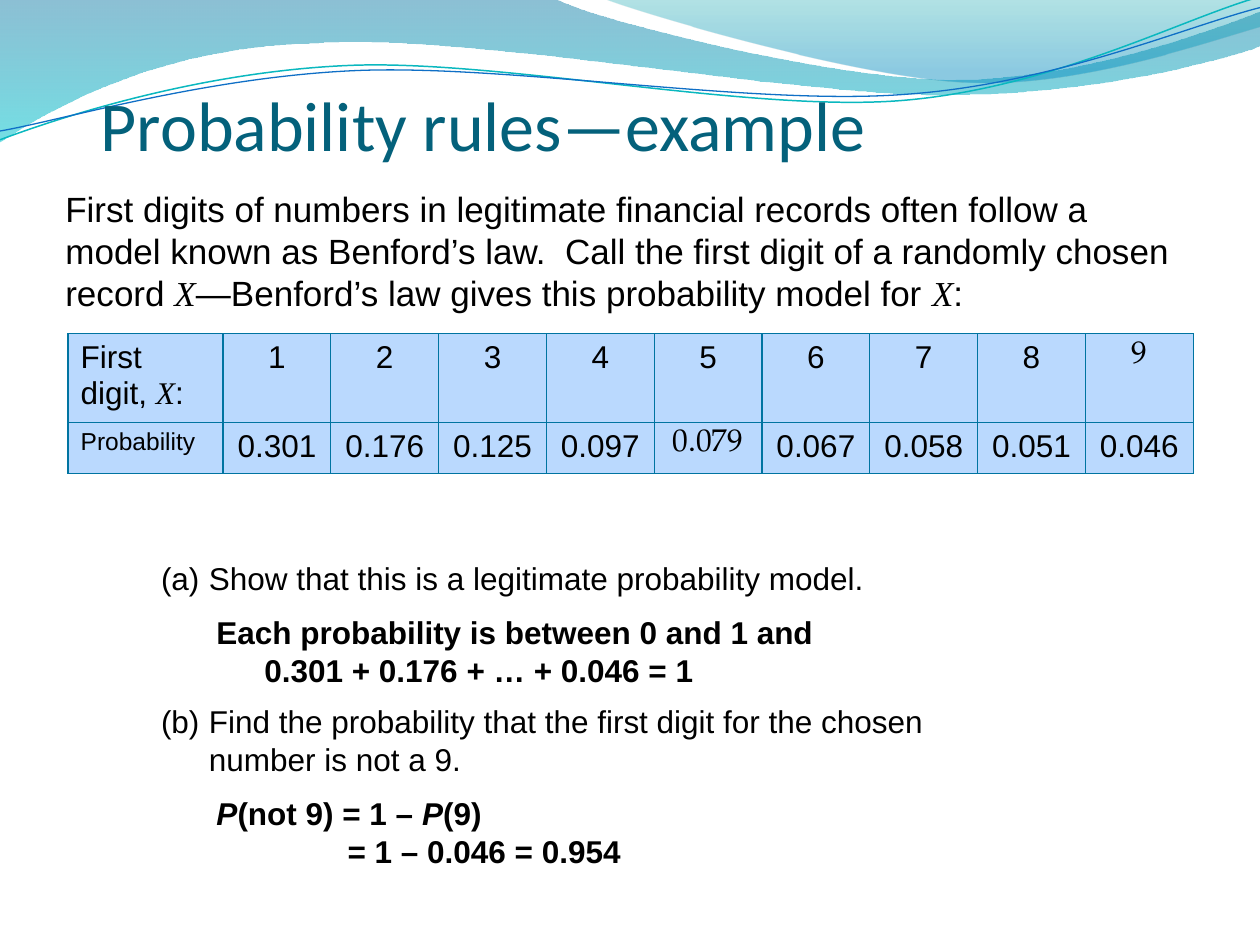
"""Build the slide on probability rules with Benford's law as the example."""
from math import cos, radians, sin

from lxml.etree import SubElement
from pptx import Presentation
from pptx.dml.color import RGBColor
from pptx.enum.text import MSO_ANCHOR, PP_ALIGN
from pptx.oxml.ns import qn
from pptx.util import Inches, Pt

BLACK = RGBColor(0, 0, 0)
TITLE = RGBColor(0x04, 0x61, 0x7B)
BLUE = RGBColor(0x00, 0x74, 0xA1)
AQUA = RGBColor(0x00, 0xC6, 0xCF)
TEAL = RGBColor(0x00, 0xA1, 0xA9)
SKY = RGBColor(0x00, 0x8B, 0xBF)
LINE_TEAL = RGBColor(0x0A, 0xB8, 0xBF)
LINE_BLUE = RGBColor(0x0F, 0x6F, 0xC6)
CELL = RGBColor(0xBA, 0xD9, 0xFE)

TILT = -2.7
SERIF, PAGELLA = "Times New Roman", "TeX Gyre Pagella"
X = ("X", {"font": SERIF, "italic": True})
P = ("P", {"italic": True})

WAVES = [
    ((-0.01, -0.01, 10.02, 1.14),
     [(0, 0), (4.4, -0.01), (4.76, 0.17, 6.64, 0.63, 7.58, 0.63),
      (8.53, 0.63, 9.58, 0.26, 10, 0.09), (10.01, 0.36),
      (9.83, 0.44, 8.7, 0.76, 7.46, 0.75), (6.22, 0.75, 3.82, 0.28, 2.57, 0.34),
      (1.29, 0.36, 0.46, 0.83, -0.01, 1.13), (0, 0)],
     [(0, BLUE, 45), (1, AQUA, 55)]),
    ((4.79, -0.01, 5.21, 0.7),
     [(4.79, -0.01), (5.09, 0.11, 6.82, 0.62, 7.69, 0.65),
      (8.56, 0.69, 9.61, 0.32, 10, 0.21), (10, 0), (4.79, -0.01)],
     [(0, TEAL, 30), (0.8, SKY, 45)]),
]
STRANDS = [
    ((-0.02, 0.22, 10.02, 0.71),
     [(0, 1.11), (0.48, 0.93, 1.58, 0.57, 2.77, 0.52), (3.95, 0.47, 5.93, 0.89, 7.13, 0.8),
      (8.33, 0.71, 9.38, 0.15, 9.98, -0.02)], LINE_TEAL, 0.85),
    ((-0.02, 0.3, 10.03, 0.58),
     [(0, 1.04), (0.47, 0.96, 1.64, 0.61, 2.83, 0.56), (4.03, 0.51, 5.97, 0.84, 7.17, 0.75),
      (8.36, 0.67, 9.41, 0.21, 10, 0.06)], LINE_BLUE, 0.75),
]
INTRO = [
    ("First digits of numbers in legitimate financial records often follow a model known as "
     "Benford’s law.  Call the first digit of a randomly chosen record ", {}),
    X, ("—Benford’s law gives this probability model for ", {}), X, (":", {}),
]
HEADS = [[("First digit, ", {}), X, (":", {})], [("Probability", {"size": 14})]]
DIGITS = ["1", "2", "3", "4", "5", "6", "7", "8", "9"]
PROBS = ["0.301", "0.176", "0.125", "0.097", "0.079", "0.067", "0.058", "0.051", "0.046"]
PAGELLA_VALUES = ("9", "0.079")
QUESTIONS = [
    ("Show that this is a legitimate probability model.", 60),
    ("Find the probability that the first digit for the chosen number is not a 9.", 24),
]
ANSWERS = [
    ([("Each probability is between 0 and 1 and", {}), ("\n", {}),
      ("0.301 + 0.176 + … + 0.046 = 1", {})], 60, 0.38, -0.38),
    ([P, ("(not 9) = 1 – ", {}), P, ("(9)", {})], 0, 0.38, -0.38),
    ([("= 1 – 0.046 = 0.954", {})], 0, 1.04, 0),
]


def add_runs(p, runs, size, color=BLACK, bold=False, font="Arial"):
    for text, style in runs:
        if text == "\n":
            p.add_line_break()
            continue
        r = p.add_run()
        r.text = text
        r.font.name = style.get("font", font)
        r.font.size = Pt(style.get("size", size))
        r.font.bold = bold
        r.font.italic = style.get("italic", False)
        r.font.color.rgb = color


def add_box(s, left, top, width, height):
    tf = s.shapes.add_textbox(*map(Inches, (left, top, width, height))).text_frame
    tf.word_wrap = True
    return tf


def next_paragraph(tf, after, margin, indent):
    p = tf.add_paragraph() if tf.paragraphs[0].runs else tf.paragraphs[0]
    p.space_after = Pt(after)
    pPr = p._p.get_or_add_pPr()
    pPr.set("marL", str(Inches(margin)))
    pPr.set("indent", str(Inches(indent)))
    return p


def add_curve(s, box, segments, close, tilt=0):
    left, top, width, height = box
    builder = s.shapes.build_freeform(0, 0)
    builder.add_line_segments([(Inches(width), Inches(height))], close=close)
    sp = builder.convert_to_shape()
    sp.left, sp.top, sp.width, sp.height = map(Inches, box)
    sp.rotation = tilt
    sp.shadow.inherit = False
    outline = next(sp._element.iter(qn("a:path")))
    outline.set("w", str(Inches(width)))
    outline.set("h", str(Inches(height)))
    for child in list(outline):
        outline.remove(child)
    a = radians(-tilt)
    for i, segment in enumerate(segments):
        tag = "a:cubicBezTo" if len(segment) == 6 else "a:lnTo" if i else "a:moveTo"
        step = SubElement(outline, qn(tag))
        for x, y in zip(segment[::2], segment[1::2]):
            dx, dy = x - left - width / 2, y - top - height / 2
            SubElement(step, qn("a:pt"),
                       x=str(Inches(width / 2 + dx * cos(a) - dy * sin(a))),
                       y=str(Inches(height / 2 + dx * sin(a) + dy * cos(a))))
    if close:
        SubElement(outline, qn("a:close"))
    return sp


def add_wave(s, box, segments, stops):
    sp = add_curve(s, box, segments, True)
    sp.line.fill.background()
    sp.fill.gradient()
    sp.fill.gradient_angle = 270
    for stop, (position, color, _) in zip(sp.fill.gradient_stops, stops):
        stop.position = position
        stop.color.rgb = color
    colors = list(sp._element.spPr.iter(qn("a:srgbClr")))
    for clr, (_, _, alpha) in zip(colors, stops):
        SubElement(clr, qn("a:alpha"), val=str(alpha * 1000))


def add_strand(s, box, segments, color, width):
    sp = add_curve(s, box, segments, False, TILT)
    sp.fill.background()
    sp.line.color.rgb = color
    sp.line.width = Pt(width)


def style_cell(cell):
    tcPr = cell._tc.get_or_add_tcPr()
    for side in ("lnL", "lnR", "lnT", "lnB"):
        ln = SubElement(tcPr, qn(f"a:{side}"), w=str(Pt(0.75)))
        SubElement(SubElement(ln, qn("a:solidFill")), qn("a:srgbClr"), val=str(BLUE))
    cell.fill.solid()
    cell.fill.fore_color.rgb = CELL


def add_model_table(s):
    frame = s.shapes.add_table(2, 10, *map(Inches, (0.54, 2.65, 8.93, 1.11)))
    table = frame.table
    table.first_row = table.horz_banding = False
    for i, column in enumerate(table.columns):
        column.width = Inches(7.7 / 9 if i else 1.23)
    for row, height in zip(table.rows, (0.7, 0.41)):
        row.height = Inches(height)
    for i, (head, values) in enumerate(zip(HEADS, (DIGITS, PROBS))):
        add_runs(table.cell(i, 0).text_frame.paragraphs[0], head, 18)
        for j, value in enumerate(values, 1):
            p = table.cell(i, j).text_frame.paragraphs[0]
            p.alignment = PP_ALIGN.CENTER
            font = PAGELLA if value in PAGELLA_VALUES else "Arial"
            add_runs(p, [(value, {})], 18, font=font)
    for cell in table.iter_cells():
        style_cell(cell)


def main():
    prs = Presentation()
    prs.slide_width, prs.slide_height = Inches(10), Inches(7.5)
    s = prs.slides.add_slide(prs.slide_layouts[6])
    for wave in WAVES:
        add_wave(s, *wave)
    for strand in STRANDS:
        add_strand(s, *strand)

    tf = add_box(s, 0.8, -0.01, 9.39, 1.33)
    tf.margin_left = tf.margin_right = tf.margin_bottom = 0
    tf.vertical_anchor = MSO_ANCHOR.BOTTOM
    tf.paragraphs[0].line_spacing = 0.9
    add_runs(tf.paragraphs[0], [("Probability rules—example", {})], 40, TITLE, font="Calibri")

    add_runs(add_box(s, 0.42, 1.44, 9.05, 1.11).paragraphs[0], INTRO, 20)
    add_model_table(s)

    tf = add_box(s, 1.18, 4.39, 7.06, 2.49)
    for text, after in QUESTIONS:
        p = next_paragraph(tf, after, 0.38, -0.38)
        SubElement(p._p.get_or_add_pPr(), qn("a:buAutoNum"), type="alphaLcParenBoth")
        add_runs(p, [(text, {})], 18)

    tf = add_box(s, 1.62, 4.82, 6.03, 2.46)
    for runs, after, margin, indent in ANSWERS:
        add_runs(next_paragraph(tf, after, margin, indent), runs, 18, bold=True)
    prs.save("out.pptx")


if __name__ == "__main__":
    main()
